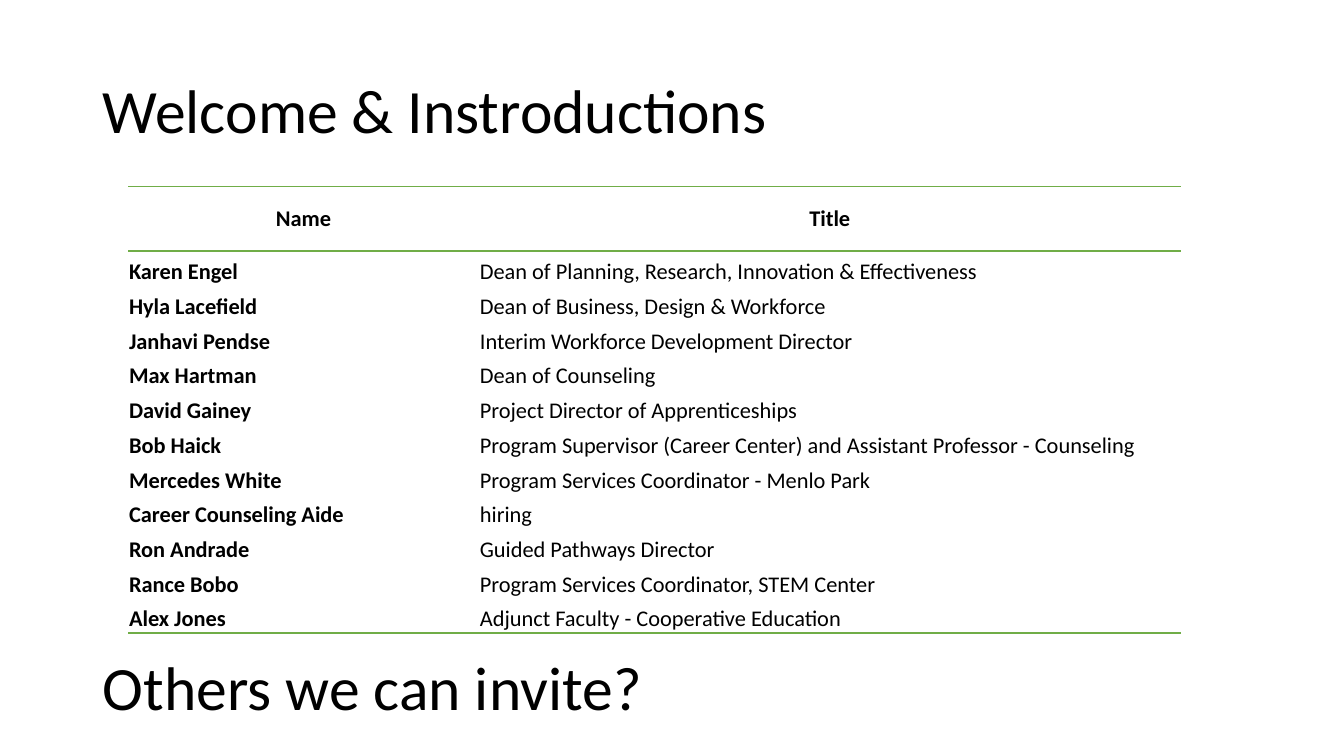
"""Build the welcome slide with its table of committee members."""
from dataclasses import dataclass

from lxml import etree
from pptx import Presentation
from pptx.dml.color import RGBColor
from pptx.enum import text
from pptx.oxml import ns
from pptx.slide import Slide
from pptx.table import _Cell
from pptx.text.text import TextFrame
from pptx.util import Inches, Pt


@dataclass(frozen=True)
class Theme:
    font: str = "Calibri"
    ink: str = "000000"
    rule: str = "70AD47"
    heading_size: int = 44
    table_size: int = 16
    rule_width: int = 1
    plain_table: str = "{2D5ABB26-0587-4C30-8999-92F81FD0307C}"


@dataclass(frozen=True)
class Heading:
    words: str
    top: float


@dataclass(frozen=True)
class Member:
    name: str
    title: str


THEME = Theme()
HEADINGS = [
    Heading("Welcome & Instroductions", 0.4),
    Heading("Others we can invite?", 6.13),
]
COLUMN_LABELS = Member("Name", "Title")
MEMBERS = [
    Member("Karen Engel", "Dean of Planning, Research, Innovation & Effectiveness"),
    Member("Hyla Lacefield", "Dean of Business, Design & Workforce"),
    Member("Janhavi Pendse", "Interim Workforce Development Director"),
    Member("Max Hartman", "Dean of Counseling"),
    Member("David Gainey", "Project Director of Apprenticeships"),
    Member("Bob Haick", "Program Supervisor (Career Center) and Assistant Professor - Counseling"),
    Member("Mercedes White", "Program Services Coordinator - Menlo Park"),
    Member("Career Counseling Aide", "hiring"),
    Member("Ron Andrade", "Guided Pathways Director"),
    Member("Rance Bobo", "Program Services Coordinator, STEM Center"),
    Member("Alex Jones", "Adjunct Faculty - Cooperative Education"),
]
TABLE_LEFT, TABLE_TOP, TABLE_HEIGHT = 1.27, 1.85, 4.43
COLUMN_WIDTHS = (3.48, 6.96)
HEADER_HEIGHT = 0.64


def write(frame: TextFrame, words: str, size: int, bold: bool = False) -> None:
    """Add one styled run to the first paragraph of a frame."""
    span = frame.paragraphs[0].add_run()
    span.text = words
    span.font.name = THEME.font
    span.font.size = Pt(size)
    span.font.bold = bold
    span.font.color.rgb = RGBColor.from_string(THEME.ink)


def draw_heading(page: Slide, heading: Heading) -> None:
    """Draw one large line of text across the page."""
    box = page.shapes.add_textbox(Inches(0.92), Inches(heading.top), Inches(11.5), Inches(1.45))
    frame = box.text_frame
    frame.word_wrap = True
    frame.vertical_anchor = text.MSO_ANCHOR.MIDDLE
    frame.paragraphs[0].line_spacing = 0.9
    write(frame, heading.words, THEME.heading_size)


def draw_rule(cell: _Cell, side: str) -> None:
    """Draw a coloured border on one side of a cell."""
    properties = cell._tc.get_or_add_tcPr()
    line = etree.SubElement(properties, ns.qn(f"a:{side}"), w=str(Pt(THEME.rule_width)))
    fill = etree.SubElement(line, ns.qn("a:solidFill"))
    etree.SubElement(fill, ns.qn("a:srgbClr"), val=THEME.rule)


def fill_cell(cell: _Cell, words: str, bold: bool, header: bool, sides: list[str]) -> None:
    """Set the text, margins and borders of one cell."""
    cell.margin_left = cell.margin_top = cell.margin_right = Inches(0.01)
    cell.margin_bottom = Inches(0)
    cell.vertical_anchor = text.MSO_ANCHOR.MIDDLE if header else text.MSO_ANCHOR.BOTTOM
    if header:
        cell.text_frame.paragraphs[0].alignment = text.PP_ALIGN.CENTER
    write(cell.text_frame, words, THEME.table_size, bold)
    for side in sides:
        draw_rule(cell, side)
    cell.fill.background()


def draw_members(page: Slide) -> None:
    """Draw the table of names and titles."""
    rows = [COLUMN_LABELS, *MEMBERS]
    table = page.shapes.add_table(
        len(rows), len(COLUMN_WIDTHS), Inches(TABLE_LEFT), Inches(TABLE_TOP),
        Inches(sum(COLUMN_WIDTHS)), Inches(TABLE_HEIGHT),
    ).table
    table._tbl.tblPr.find(ns.qn("a:tableStyleId")).text = THEME.plain_table
    table.horz_banding = False
    for column, width in zip(table.columns, COLUMN_WIDTHS):
        column.width = Inches(width)
    member_height = (TABLE_HEIGHT - HEADER_HEIGHT) / len(MEMBERS)
    for index, member in enumerate(rows):
        header = index == 0
        table.rows[index].height = Inches(HEADER_HEIGHT if header else member_height)
        sides = ["lnT", "lnB"] if header else ["lnB"] if member is MEMBERS[-1] else []
        fill_cell(table.cell(index, 0), member.name, True, header, sides)
        fill_cell(table.cell(index, 1), member.title, header, header, sides)


def main() -> None:
    """Create the deck and save it."""
    deck = Presentation()
    deck.slide_width, deck.slide_height = Inches(13.33), Inches(7.5)
    page = deck.slides.add_slide(deck.slide_layouts[6])
    for heading in HEADINGS:
        draw_heading(page, heading)
    draw_members(page)
    deck.save("out.pptx")


if __name__ == "__main__":
    main()
